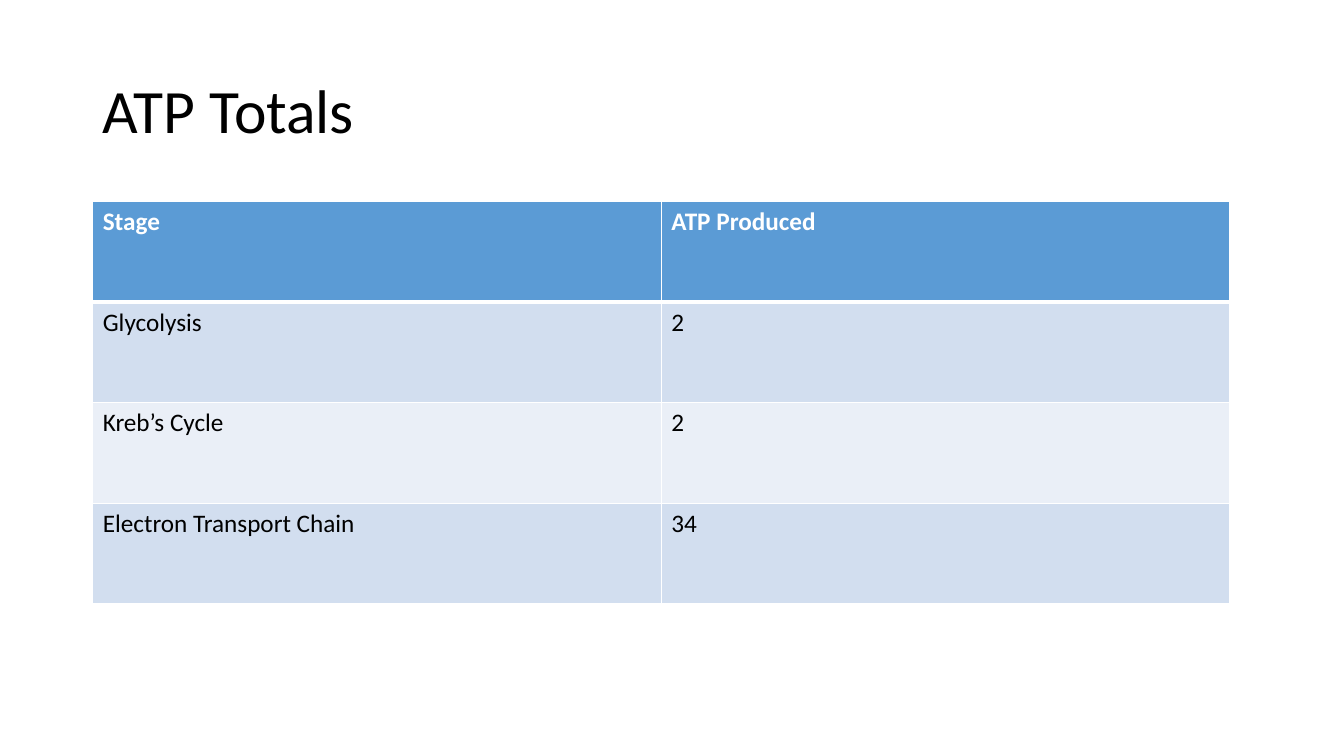
from lxml import etree
from pptx import Presentation, util as u
from pptx.dml.color import RGBColor
from pptx.enum import text
from pptx.oxml import ns

PX = 9144  # 100 px to the inch
FONT = "Calibri"


def paint(target, color):
    """Give a fill a solid hex colour."""
    target.solid()
    target.fore_color.rgb = RGBColor.from_string(color)


def add_border(cell, side, points):
    """Add a white border to one side (L, R, T or B) of a cell."""
    line = etree.SubElement(cell._tc.get_or_add_tcPr(), ns.qn(f"a:ln{side}"), w=str(u.Pt(points)))
    fill = etree.SubElement(line, ns.qn("a:solidFill"))
    etree.SubElement(fill, ns.qn("a:srgbClr"), val="FFFFFF")


prs = Presentation()
prs.slide_width, prs.slide_height = 1333 * PX, 750 * PX
slide = prs.slides.add_slide(prs.slide_layouts[5])
paint(slide.background.fill, "FFFFFF")

# Title
title = slide.shapes.title
title.left, title.top, title.width, title.height = (n * PX for n in (92, 40, 1150, 145))
title.text_frame.text = "ATP Totals"
title.text_frame.vertical_anchor = text.MSO_ANCHOR.MIDDLE
heading = title.text_frame.paragraphs[0]
heading.alignment = text.PP_ALIGN.LEFT
heading.line_spacing = 0.9
heading.runs[0].font.name = FONT
heading.runs[0].font.size = u.Pt(44)
paint(heading.runs[0].font.fill, "000000")

# ATP table
stages = [
    ("Stage", "ATP Produced"),
    ("Glycolysis", "2"),
    ("Kreb’s Cycle", "2"),
    ("Electron Transport Chain", "34"),
]
totals = slide.shapes.add_table(
    len(stages), 2, 92 * PX, 200 * PX, 1128 * PX, 399 * PX
).table

for row, values in enumerate(stages):
    is_header = row == 0
    band = "5B9BD5" if is_header else ("EAEFF7", "D2DEEF")[row % 2]
    for col, value in enumerate(values):
        cell = totals.cell(row, col)
        cell.text = value
        font = cell.text_frame.paragraphs[0].runs[0].font
        font.name, font.size, font.bold = FONT, u.Pt(18), is_header
        paint(font.fill, "FFFFFF" if is_header else "000000")
        # The thick rule sits between the header and the first stage
        top, bottom = (3 if row == 1 else 1), (3 if is_header else 1)
        for side, points in (("L", 1), ("R", 1), ("T", top), ("B", bottom)):
            add_border(cell, side, points)
        paint(cell.fill, band)

prs.save("out.pptx")
